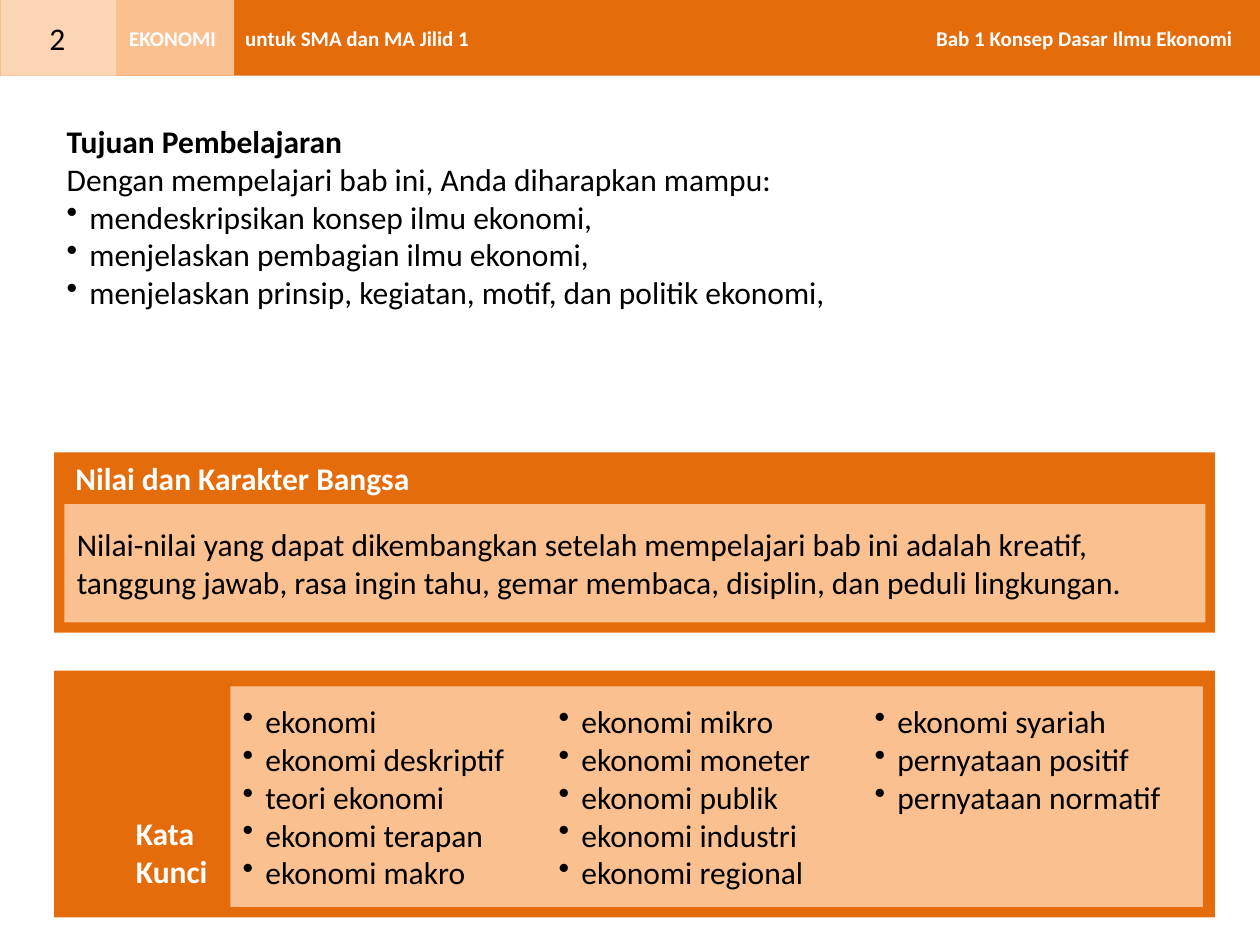
"""Builds the learning goals slide of an economics chapter."""
import pptx
import pptx.dml.color
import pptx.enum.shapes
import pptx.enum.text
import pptx.oxml.ns
import pptx.util
from lxml import etree

Pt = pptx.util.Pt
ALIGN = pptx.enum.text.PP_ALIGN
ANCHOR = pptx.enum.text.MSO_ANCHOR
ORANGE, PEACH, CREAM = "E46C0A", "FAC090", "FCD5B5"
BLACK, WHITE = "000000", "FFFFFF"


def color(value):
    return pptx.dml.color.RGBColor.from_string(value)


class SlideBuilder:
    font = "Calibri"
    bullet_indent = 13

    def __init__(self, page):
        self.page = page
        self.shapes = page.shapes

    def start_group(self):
        self.shapes = self.page.shapes.add_group_shape().shapes

    def panel(self, left, top, width, height, fill):
        box = self.shapes.add_shape(pptx.enum.shapes.MSO_SHAPE.RECTANGLE,
                                    Pt(left), Pt(top), Pt(width), Pt(height))
        box.shadow.inherit = False
        box.fill.solid()
        box.fill.fore_color.rgb = color(fill)
        box.line.fill.background()
        return box

    def label(self, left, top, width, height, lines, ink=BLACK, size=18, bold=False,
              align=ALIGN.LEFT, anchor=ANCHOR.TOP):
        box = self.shapes.add_textbox(Pt(left), Pt(top), Pt(width), Pt(height))
        self.add_lines(box, lines, ink, size, bold, align, anchor)
        return box

    def add_lines(self, box, lines, ink=BLACK, size=18, bold=False,
                  align=ALIGN.LEFT, anchor=ANCHOR.MIDDLE, bullets=False):
        frame = box.text_frame
        frame.word_wrap = True
        frame.vertical_anchor = anchor
        for index, line in enumerate(lines):
            para = frame.paragraphs[0] if index == 0 else frame.add_paragraph()
            self.fill_paragraph(para, line, ink, size, bold, align, bullets)

    def fill_paragraph(self, para, text, ink=BLACK, size=18, bold=False,
                       align=ALIGN.LEFT, bullet=False):
        para.alignment = align
        if bullet:
            properties = para._p.get_or_add_pPr()
            properties.set("marL", str(Pt(self.bullet_indent)))
            properties.set("indent", str(-Pt(self.bullet_indent)))
            etree.SubElement(properties, pptx.oxml.ns.qn("a:buChar"), char="•")
        span = para.add_run()
        span.text = text
        span.font.name = self.font
        span.font.size = Pt(size)
        span.font.bold = bold
        span.font.color.rgb = color(ink)

    def columns(self, box, count):
        box.text_frame._txBody.bodyPr.set("numCol", str(count))


def add_header(builder):
    builder.panel(0, 0, 720, 43.2, ORANGE)
    builder.panel(0, 0, 133.9, 43.2, PEACH)
    builder.panel(0.7, 0, 65.5, 43.2, CREAM)
    for left, width, text, align in (
            (130.3, 147.6, "untuk SMA dan MA Jilid 1", ALIGN.CENTER),
            (524.2, 187.2, "Bab 1 Konsep Dasar Ilmu Ekonomi", ALIGN.RIGHT),
            (61.9, 73.4, "EKONOMI", ALIGN.CENTER)):
        builder.label(left, 7.2, width, 28.8, [text], WHITE, 12, True, align, ANCHOR.MIDDLE)
    builder.label(13, 7.2, 39.6, 28.8, ["2"], align=ALIGN.CENTER)


def add_goals(builder):
    box = builder.label(31, 66.2, 601.2, 138.2, ["Tujuan Pembelajaran"], bold=True)
    frame = box.text_frame
    builder.fill_paragraph(frame.add_paragraph(),
                           "Dengan mempelajari bab ini, Anda diharapkan mampu:")
    for goal in ("mendeskripsikan konsep ilmu ekonomi,",
                 "menjelaskan pembagian ilmu ekonomi,",
                 "menjelaskan prinsip, kegiatan, motif, dan politik ekonomi,"):
        builder.fill_paragraph(frame.add_paragraph(), goal, bullet=True)


def add_values(builder):
    builder.start_group()
    builder.panel(31, 258.5, 663.3, 103, ORANGE)
    body = builder.panel(36.8, 288, 652, 67.6, PEACH)
    builder.add_lines(body, ["Nilai-nilai yang dapat dikembangkan setelah mempelajari bab ini "
                             "adalah kreatif, tanggung jawab, rasa ingin tahu, gemar membaca, "
                             "disiplin, dan peduli lingkungan."])
    title = builder.label(36, 258.5, 223.2, 29, ["Nilai dan Karakter Bangsa"], WHITE, bold=True)
    title.text_frame.word_wrap = False


def add_keywords(builder):
    builder.start_group()
    builder.panel(31, 383.2, 663.3, 141.1, ORANGE)
    body = builder.panel(131.6, 392.2, 555.8, 126, PEACH)
    builder.add_lines(body, ["ekonomi", "ekonomi deskriptif", "teori ekonomi",
                             "ekonomi terapan", "ekonomi makro", "ekonomi mikro",
                             "ekonomi moneter", "ekonomi publik", "ekonomi industri",
                             "ekonomi regional", "ekonomi syariah", "pernyataan positif",
                             "pernyataan normatif"], bullets=True)
    builder.columns(body, 3)
    builder.label(70.6, 461.5, 64, 51, ["Kata", "Kunci"], WHITE, bold=True)


def main():
    deck = pptx.Presentation()
    deck.slide_width, deck.slide_height = Pt(720), Pt(540)
    builder = SlideBuilder(deck.slides.add_slide(deck.slide_layouts[6]))
    add_header(builder)
    add_goals(builder)
    add_values(builder)
    add_keywords(builder)
    deck.save("out.pptx")


if __name__ == "__main__":
    main()
